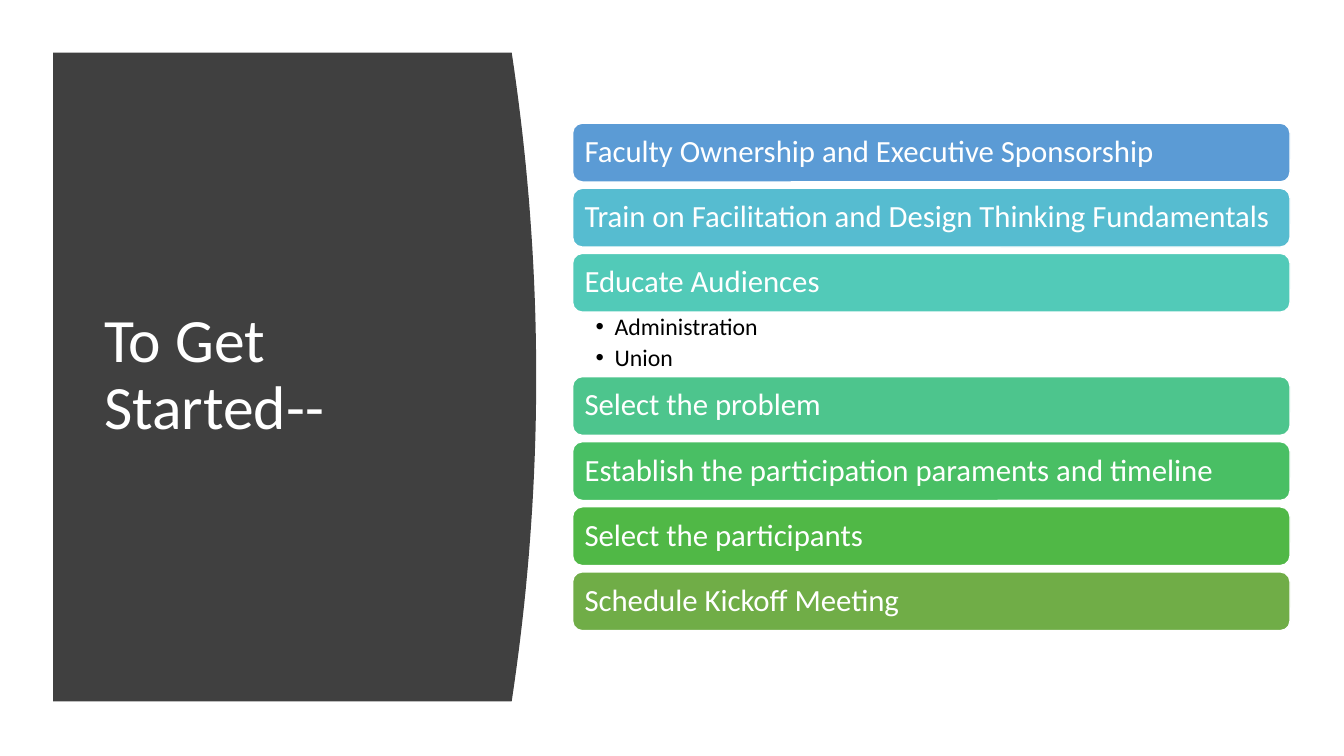
from lxml import etree
from pptx import Presentation
from pptx.dml.color import RGBColor
from pptx.enum.shapes import MSO_SHAPE
from pptx.enum.text import MSO_ANCHOR, PP_ALIGN
from pptx.oxml.ns import qn
from pptx.util import Pt

PX = 6350
ROUNDED = MSO_SHAPE.ROUNDED_RECTANGLE
MIDDLE = MSO_ANCHOR.MIDDLE
LEFT = PP_ALIGN.LEFT
FONT = "Calibri"
COLORS = {
    "panel": "404040",
    "white": "FFFFFF",
    "black": "000000",
    "blue": "5B9BD5",
    "sky": "56BCD0",
    "teal": "52CAB8",
    "mint": "4DC58D",
    "emerald": "49BF64",
    "green": "50B846",
    "olive": "70AD47",
}
STEPS = [
    ("Faculty Ownership and Executive Sponsorship", "blue", []),
    ("Train on Facilitation and Design Thinking Fundamentals", "sky", []),
    ("Educate Audiences", "teal", ["Administration", "Union"]),
    ("Select the problem", "mint", []),
    ("Establish the participation paraments and timeline", "emerald", []),
    ("Select the participants", "green", []),
    ("Schedule Kickoff Meeting", "olive", []),
]


def color(name):
    """Return the named colour."""
    return RGBColor.from_string(COLORS[name])


def set_insets(text_frame, left, top, right, bottom):
    """Wrap the text and set its margins in px."""
    text_frame.word_wrap = True
    text_frame.margin_left = left * PX
    text_frame.margin_top = top * PX
    text_frame.margin_right = right * PX
    text_frame.margin_bottom = bottom * PX


def style_paragraph(paragraph, size, color_name):
    """Set alignment, line spacing and font of a paragraph."""
    paragraph.alignment = LEFT
    paragraph.line_spacing = 0.9
    for run in paragraph.runs:
        run.font.name = FONT
        run.font.size = Pt(size)
        run.font.color.rgb = color(color_name)


def add_title_panel(slide, left, top, width, height):
    """Draw the dark panel with a bulging right edge and its title."""
    bulge, segments = 35, 40
    edge = []
    for index in range(segments + 1):
        fraction = index / segments
        x = left + width - bulge * (2 * fraction - 1) ** 2
        edge.append((x * PX, (top + height * fraction) * PX))
    builder = slide.shapes.build_freeform(left * PX, top * PX)
    builder.add_line_segments(edge + [(left * PX, (top + height) * PX)], close=True)
    panel = builder.convert_to_shape()
    panel.shadow.inherit = False
    panel.fill.solid()
    panel.fill.fore_color.rgb = color("panel")
    panel.line.fill.background()

    title = slide.shapes.add_textbox(
        (left + 59) * PX, (top + 85) * PX, (width - 151) * PX, (height - 173) * PX
    )
    text_frame = title.text_frame
    set_insets(text_frame, 14, 7, 14, 7)
    text_frame.vertical_anchor = MIDDLE
    text_frame.text = "To Get Started--"
    style_paragraph(text_frame.paragraphs[0], 44, "white")


def add_step_bar(slide, left, top, width, height, text, fill):
    """Draw one rounded bar with its label."""
    bar = slide.shapes.add_shape(ROUNDED, left * PX, top * PX, width * PX, height * PX)
    bar.shadow.inherit = False
    bar.fill.solid()
    bar.fill.fore_color.rgb = color(fill)
    bar.line.color.rgb = color("white")
    bar.line.width = Pt(1)
    text_frame = bar.text_frame
    set_insets(text_frame, 13, 13, 13, 13)
    text_frame.vertical_anchor = MIDDLE
    text_frame.text = text
    style_paragraph(text_frame.paragraphs[0], 22, "white")


def add_bullets(slide, left, top, width, height, items):
    """Write the bulleted details below a bar."""
    box = slide.shapes.add_textbox(left * PX, top * PX, width * PX, height * PX)
    text_frame = box.text_frame
    set_insets(text_frame, 33, 4, 24, 4)
    text_frame.text = "\n".join(items)
    for paragraph in text_frame.paragraphs:
        properties = paragraph._p.get_or_add_pPr()
        properties.set("marL", str(27 * PX))
        properties.set("indent", str(-27 * PX))
        etree.SubElement(properties, qn("a:buFont")).set("typeface", "Arial")
        etree.SubElement(properties, qn("a:buChar")).set("char", "•")
        style_paragraph(paragraph, 17, "black")
        paragraph.space_after = Pt(3.4)


def add_step_list(slide, left, top, width):
    """Stack the bars, leaving room for bulleted details."""
    bar_height, gap, bullets_height = 84, 9, 92
    for text, fill, items in STEPS:
        add_step_bar(slide, left, top, width, bar_height, text, fill)
        top += bar_height
        if items:
            add_bullets(slide, left, top, width, bullets_height, items)
            top += bullets_height
        else:
            top += gap


def main():
    """Build and save the presentation."""
    presentation = Presentation()
    presentation.slide_width = 1920 * PX
    presentation.slide_height = 1080 * PX
    slide = presentation.slides.add_slide(presentation.slide_layouts[6])
    add_title_panel(slide, 76, 75, 690, 927)
    add_step_list(slide, 818, 176, 1025)
    presentation.save("out.pptx")


if __name__ == "__main__":
    main()
